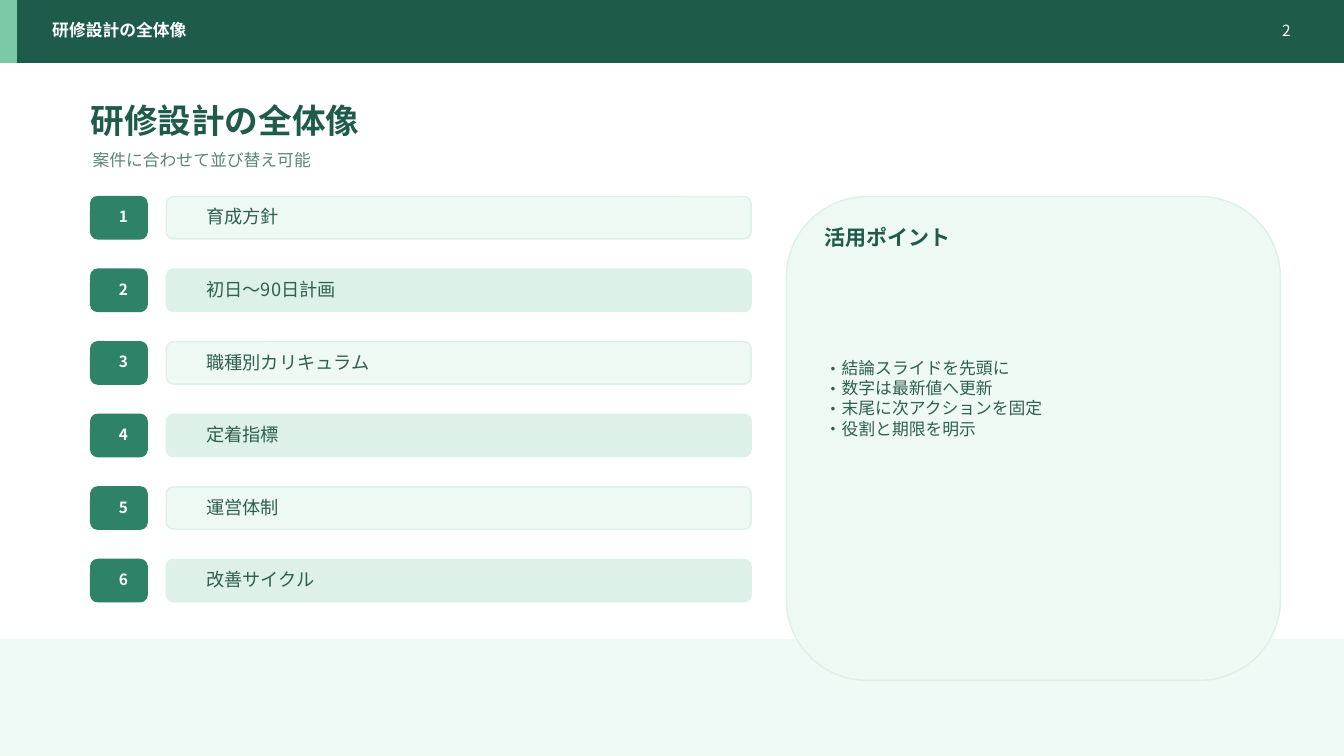
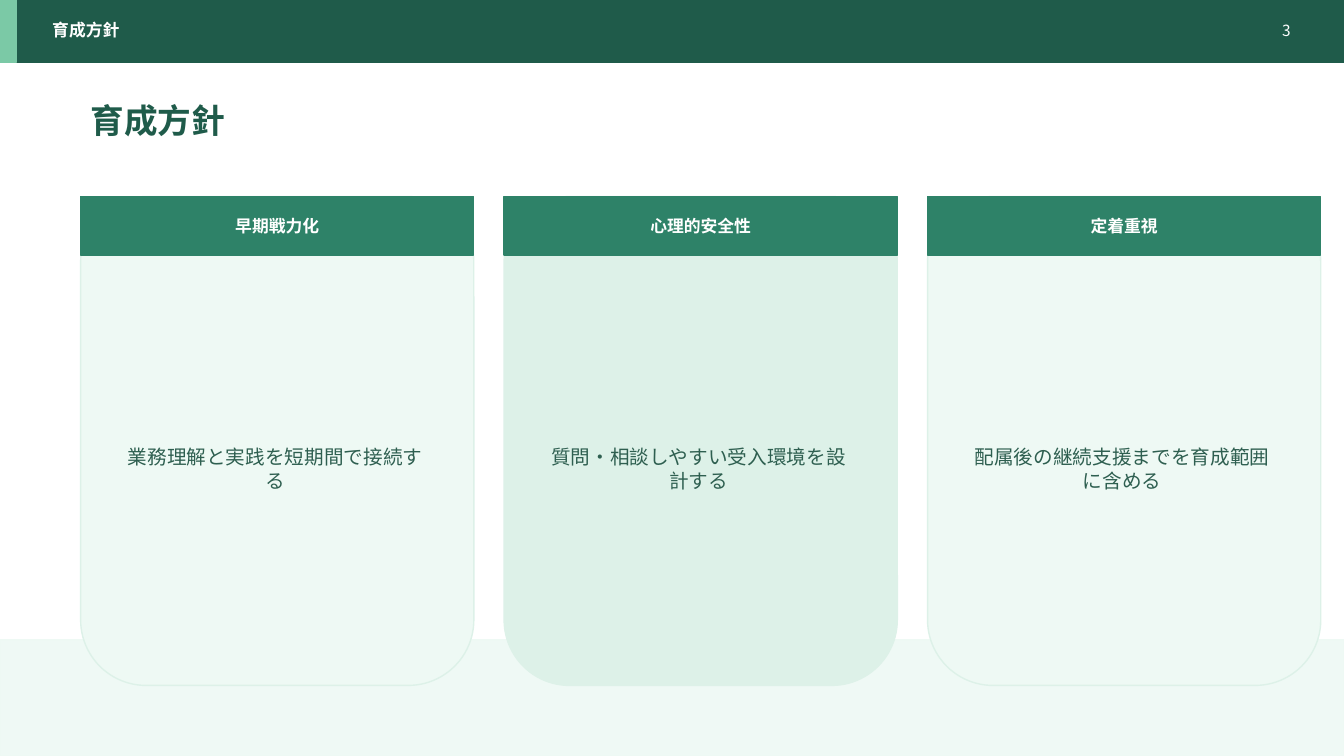
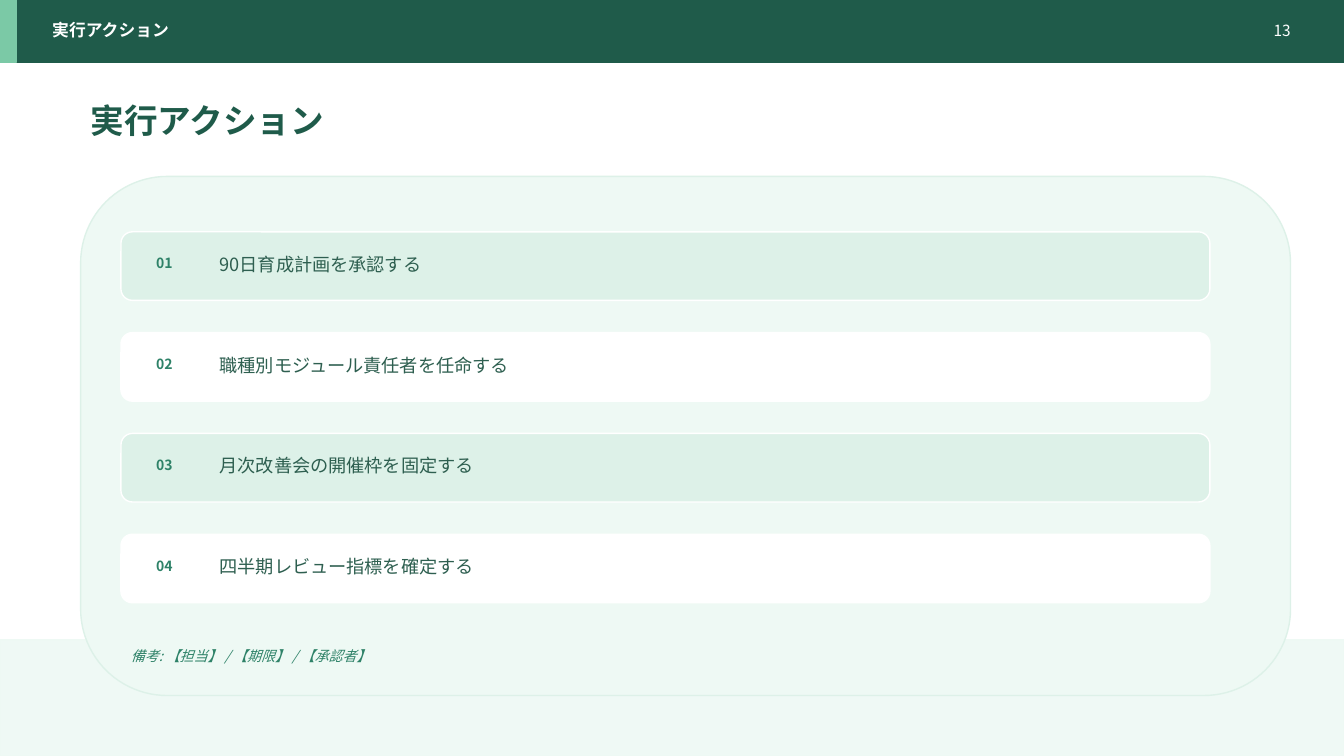
import lxml.etree
import pptx
import pptx.dml.color
import pptx.enum.shapes
import pptx.enum.text
import pptx.oxml.ns
import pptx.util

RGB = pptx.dml.color.RGBColor
DEEP = RGB(0x1F, 0x5B, 0x4A)
GREEN = RGB(0x2E, 0x82, 0x68)
ACCENT = RGB(0x7B, 0xC9, 0xA6)
MIST = RGB(0xEE, 0xF9, 0xF4)
MINT = RGB(0xDD, 0xF1, 0xE8)
INK = RGB(0x2E, 0x5F, 0x50)
MUTED = RGB(0x5A, 0x87, 0x77)
WHITE = RGB(0xFF, 0xFF, 0xFF)

FONT = "Noto Sans CJK JP"
EMU_PER_PX = 9144
WIDTH, HEIGHT = 1333, 750

RECT = pptx.enum.shapes.MSO_SHAPE.RECTANGLE
ROUND = pptx.enum.shapes.MSO_SHAPE.ROUNDED_RECTANGLE
LEFT = pptx.enum.text.PP_ALIGN.LEFT
CENTER = pptx.enum.text.PP_ALIGN.CENTER
RIGHT = pptx.enum.text.PP_ALIGN.RIGHT

STYLES = {
    "header": ({"size": 12, "bold": True}, WHITE, LEFT),
    "page": ({"size": 11}, WHITE, RIGHT),
    "title": ({"size": 24, "bold": True}, DEEP, LEFT),
    "subtitle": ({"size": 12}, MUTED, LEFT),
    "badge": ({"size": 11, "bold": True}, WHITE, CENTER),
    "item": ({"size": 13}, INK, LEFT),
    "points_title": ({"size": 15, "bold": True}, DEEP, LEFT),
    "points": ({"size": 12}, INK, LEFT),
    "card_title": ({"size": 12, "bold": True}, WHITE, CENTER),
    "card_body": ({"size": 14}, INK, CENTER),
    "action_number": ({"size": 10, "bold": True}, GREEN, LEFT),
    "note": ({"size": 10, "italic": True}, GREEN, LEFT),
}

OVERVIEW = {
    "title": "研修設計の全体像",
    "page": 2,
    "subtitle": "案件に合わせて並び替え可能",
    "agenda": ["育成方針", "初日〜90日計画", "職種別カリキュラム", "定着指標", "運営体制", "改善サイクル"],
    "points_title": "活用ポイント",
    "points": ["結論スライドを先頭に", "数字は最新値へ更新", "末尾に次アクションを固定", "役割と期限を明示"],
}
POLICY = {
    "title": "育成方針",
    "page": 3,
    "cards": [
        ("早期戦力化", "業務理解と実践を短期間で接続する"),
        ("心理的安全性", "質問・相談しやすい受入環境を設計する"),
        ("定着重視", "配属後の継続支援までを育成範囲に含める"),
    ],
}
ACTIONS = {
    "title": "実行アクション",
    "page": 13,
    "actions": [
        "90日育成計画を承認する",
        "職種別モジュール責任者を任命する",
        "月次改善会の開催枠を固定する",
        "四半期レビュー指標を確定する",
    ],
    "note": "備考: 【担当】 / 【期限】 / 【承認者】",
}


def emu(*lengths):
    return [pptx.util.Emu(length * EMU_PER_PX) for length in lengths]


def add_element(parent, tag, attribute, value):
    lxml.etree.SubElement(parent, pptx.oxml.ns.qn(tag)).set(attribute, value)


def add_block(slide, preset, box, fill, line):
    block = slide.shapes.add_shape(preset, *emu(*box))
    block.shadow.inherit = False
    block.fill.solid()
    block.fill.fore_color.rgb = fill
    block.line.color.rgb = line
    block.line.width = pptx.util.Pt(1)
    return block


def add_bullet(paragraph):
    hanging = emu(17)[0]
    properties = paragraph._p.get_or_add_pPr()
    properties.set("marL", str(hanging))
    properties.set("indent", str(-hanging))
    add_element(properties, "a:buFont", "typeface", FONT)
    add_element(properties, "a:buChar", "char", "・")


def add_text(slide, style, box, *lines, bulleted=False):
    formats, color, align = STYLES[style]
    frame = slide.shapes.add_textbox(*emu(*box)).text_frame
    frame.word_wrap = True
    frame.vertical_anchor = pptx.enum.text.MSO_ANCHOR.MIDDLE
    for index, line in enumerate(lines):
        paragraph = frame.add_paragraph() if index else frame.paragraphs[0]
        paragraph.alignment = align
        if bulleted:
            add_bullet(paragraph)
        run = paragraph.add_run()
        run.text = line
        for name, value in formats.items():
            setattr(run.font, name, pptx.util.Pt(value) if name == "size" else value)
        run.font.color.rgb = color
        run.font.name = FONT
        add_element(run._r.get_or_add_rPr(), "a:ea", "typeface", FONT)


def add_frame(deck, content):
    slide = deck.slides.add_slide(deck.slide_layouts[6])
    footer = add_block(slide, RECT, (0, 635, WIDTH, 115), MIST, MIST)
    footer_color = footer.fill._xPr.find(".//" + pptx.oxml.ns.qn("a:srgbClr"))
    add_element(footer_color, "a:alpha", "val", "90000")
    add_block(slide, RECT, (0, 0, WIDTH, 62), DEEP, DEEP)
    add_block(slide, RECT, (0, 0, 16, 62), ACCENT, ACCENT)
    add_text(slide, "header", (42, 17, 880, 26), content["title"])
    add_text(slide, "page", (1215, 17, 75, 26), str(content["page"]))
    add_text(slide, "title", (80, 95, 1140, 48), content["title"])
    return slide


def build_overview(deck, content):
    slide = add_frame(deck, content)
    add_text(slide, "subtitle", (82, 144, 1120, 30), content["subtitle"])
    for index, item in enumerate(content["agenda"]):
        top = 195 + 72 * index
        add_block(slide, ROUND, (90, top, 56, 42), GREEN, GREEN)
        add_text(slide, "badge", (108, top + 10, 20, 20), str(index + 1))
        add_block(slide, ROUND, (165, top, 580, 42), (MIST, MINT)[index % 2], MINT)
        add_text(slide, "item", (195, top + 10, 520, 20), item)
    add_block(slide, ROUND, (780, 195, 490, 480), MIST, MINT)
    add_text(slide, "points_title", (808, 220, 410, 30), content["points_title"])
    add_text(slide, "points", (808, 270, 420, 250), *content["points"], bulleted=True)


def build_policy(deck, content):
    slide = add_frame(deck, content)
    for index, (heading, body) in enumerate(content["cards"]):
        left = 80 + 420 * index
        add_block(slide, ROUND, (left, 195, 390, 485), (MIST, MINT)[index % 2], MINT)
        add_block(slide, RECT, (left, 195, 390, 58), GREEN, GREEN)
        add_text(slide, "card_title", (left + 20, 212, 350, 24), heading)
        add_text(slide, "card_body", (left + 28, 290, 330, 350), body)


def build_actions(deck, content):
    slide = add_frame(deck, content)
    add_block(slide, ROUND, (80, 175, 1200, 515), MIST, MINT)
    for index, action in enumerate(content["actions"]):
        top = 230 + 100 * index
        add_block(slide, ROUND, (120, top, 1080, 68), (MINT, WHITE)[index % 2], WHITE)
        add_text(slide, "action_number", (145, top + 21, 44, 20), f"{index + 1:02d}")
        add_text(slide, "item", (208, top + 20, 960, 24), action)
    add_text(slide, "note", (120, 640, 680, 22), content["note"])


def main():
    deck = pptx.Presentation()
    deck.slide_width, deck.slide_height = emu(WIDTH, HEIGHT)
    build_overview(deck, OVERVIEW)
    build_policy(deck, POLICY)
    build_actions(deck, ACTIONS)
    deck.save("out.pptx")


if __name__ == "__main__":
    main()
